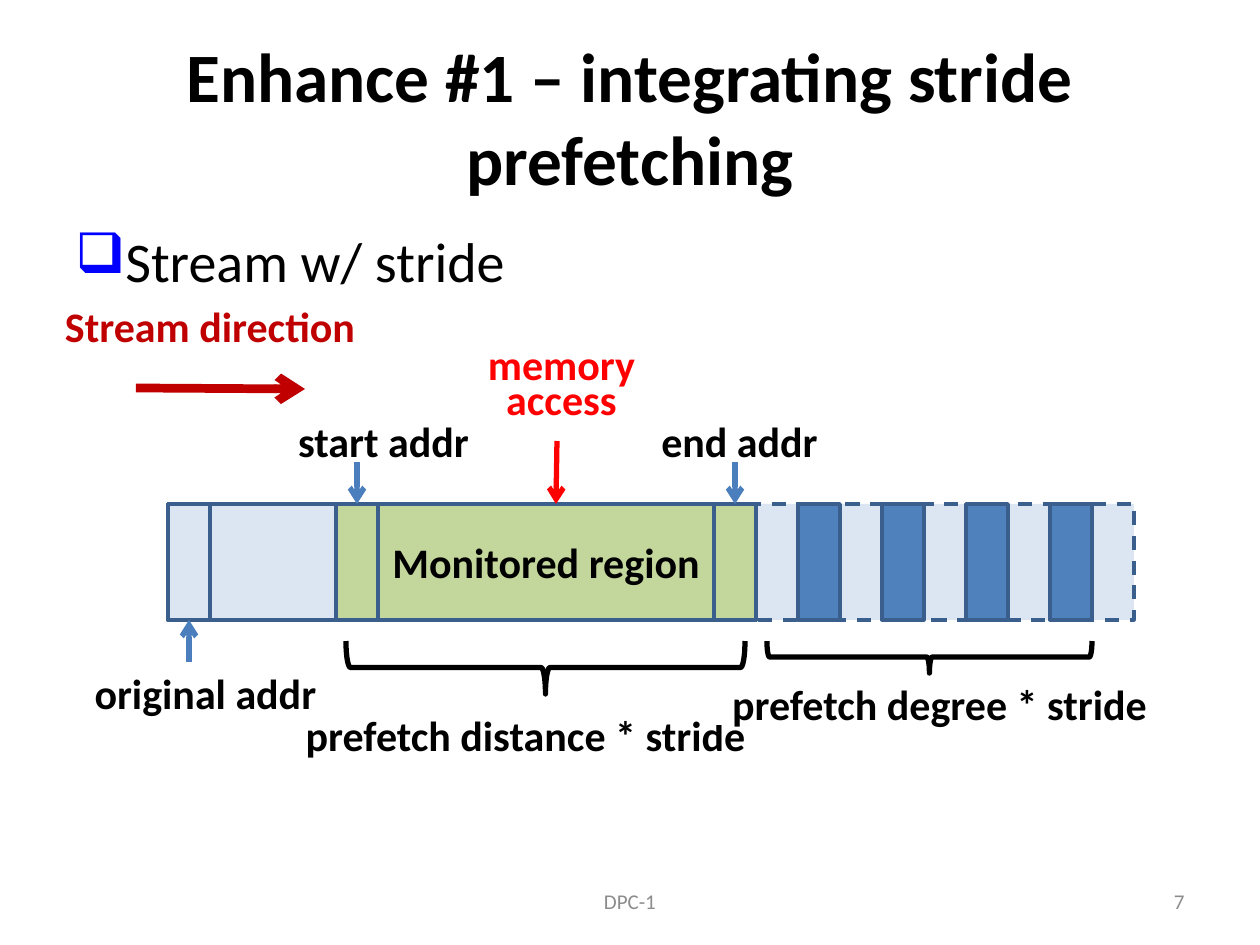
from lxml import etree
from pptx import Presentation
from pptx.dml.color import RGBColor
from pptx.enum.dml import MSO_LINE
from pptx.enum.shapes import MSO_CONNECTOR, MSO_SHAPE
from pptx.enum.text import MSO_ANCHOR, PP_ALIGN
from pptx.oxml.ns import qn
from pptx.util import Emu, Pt

RECT, BRACE = MSO_SHAPE.RECTANGLE, MSO_SHAPE.LEFT_BRACE
LINE, DASH = MSO_CONNECTOR.STRAIGHT, MSO_LINE.DASH
LEFT, MID, RIGHT = PP_ALIGN.LEFT, PP_ALIGN.CENTER, PP_ALIGN.RIGHT
TOP, CENTER = MSO_ANCHOR.TOP, MSO_ANCHOR.MIDDLE
FONT = "Calibri"
PX = 914400 / 126
CELL, BAR_X, BAR_Y, BAR_H = 42, 168, 504, 116

COLORS = {
    "white": "FFFFFF", "black": "000000", "gray": "8C8C8C",
    "pale": "DCE6F2", "blue": "4F81BD", "green": "C3D69B",
    "edge": "3A5F8C", "arrow": "4B7EBC", "red": "FF0000",
    "dark": "C00000", "bullet": "0000FF",
}

TEXTS = [
    ("Enhance #1 – integrating stride prefetching",
     (63, 38, 1134, 157), 39.6, "black", True, MID, CENTER),
    ("Stream w/ stride", (63, 220, 1134, 624), 32, "black", False, LEFT, TOP),
    ("DPC-1", (430, 876, 400, 50), 12, "gray", False, MID, CENTER),
    ("7", (903, 876, 294, 50), 12, "gray", False, RIGHT, CENTER),
]
CELLS = [
    (14, 9, "pale", True), (0, 14, "pale", False), (0, 1, "pale", False),
    (4, 1, "green", False), (5, 8, "green", False), (13, 1, "green", False),
] + [(n, 1, "blue", False) for n in range(15, 22, 2)]
LABELS = [
    ("Stream direction", (42, 305, 336, 42), "dark"),
    ("original addr", (53, 672, 305, 42), "black"),
    ("memory access", (472, 347, 179, 84), "red"),
    ("start addr", (284, 420, 199, 42), "black"),
    ("end addr", (640, 420, 199, 42), "black"),
    ("prefetch distance * stride", (284, 714, 483, 42), "black"),
    ("prefetch degree * stride", (714, 683, 451, 42), "black"),
]
BRACES = [(346, 641, 399, 53), (767, 641, 325, 32)]
ARROWS = [
    (189, 662, 189, 620, "arrow", 3),
    (357, 462, 357, 504, "arrow", 3),
    (735, 462, 735, 504, "arrow", 3),
    (557, 441, 556, 504, "red", 3),
    (136, 388, 305, 389, "dark", 5),
]


def px(*nums):
    return [Emu(round(n * PX)) for n in nums]


def rgb(name):
    return RGBColor.from_string(COLORS[name])


def write(shape, text, size, color, bold, align, anchor):
    frame = shape.text_frame
    frame.word_wrap = True
    frame.vertical_anchor = anchor
    para = frame.paragraphs[0]
    para.alignment = align
    run = para.add_run()
    run.text = text
    font = run.font
    font.name, font.size, font.bold = FONT, Pt(size), bold
    font.color.rgb = rgb(color)
    return para


def add_box(kind, box, fill=None, edge=None, width=2):
    shape = slide.shapes.add_shape(kind, *px(*box))
    shape.shadow.inherit = False
    if fill:
        shape.fill.solid()
        shape.fill.fore_color.rgb = rgb(fill)
    else:
        shape.fill.background()
    if edge:
        shape.line.color.rgb = rgb(edge)
        shape.line.width = Pt(width)
    else:
        shape.line.fill.background()
    return shape


def add_bullet(para):
    para.space_before = Pt(6.4)
    props = para._p.get_or_add_pPr()
    indent = px(48)[0]
    props.set("marL", str(indent))
    props.set("indent", str(-indent))
    color = etree.SubElement(props, qn("a:buClr"))
    etree.SubElement(color, qn("a:srgbClr"), val=COLORS["bullet"])
    etree.SubElement(props, qn("a:buChar"), char="❑")


def add_arrow(x1, y1, x2, y2, color, width):
    arrow = slide.shapes.add_connector(LINE, *px(x1, y1, x2, y2))
    arrow.line.color.rgb = rgb(color)
    arrow.line.width = Pt(width)
    etree.SubElement(arrow.line._get_or_add_ln(), qn("a:tailEnd"), type="arrow")
    etree.SubElement(arrow._element.spPr, qn("a:effectLst"))


deck = Presentation()
deck.slide_width, deck.slide_height = px(1260, 945)
slide = deck.slides.add_slide(deck.slide_layouts[6])

for text, box, *style in TEXTS:
    para = write(slide.shapes.add_textbox(*px(*box)), text, *style)
    if style[3] == LEFT:
        add_bullet(para)

for start, count, fill, dashed in CELLS:
    box = BAR_X + start * CELL, BAR_Y, count * CELL, BAR_H
    cell = add_box(RECT, box, fill, "edge")
    if dashed:
        cell.line.dash_style = DASH
    if fill == "green" and count > 1:
        write(cell, "Monitored region", 24, "black", True, MID, CENTER)

for x, y, wide, high in BRACES:
    shift = (wide - high) / 2
    brace = add_box(BRACE, (x + shift, y - shift, high, wide), None, "black", 3)
    brace.rotation = 270

for text, box, color in LABELS:
    label = add_box(RECT, box, "white")
    frame = label.text_frame
    frame.margin_left = frame.margin_right = 0
    para = write(label, text, 24, color, True, MID, CENTER)
    if color == "red":
        para.line_spacing = Pt(20)

for arrow in ARROWS:
    add_arrow(*arrow)

deck.save("out.pptx")
